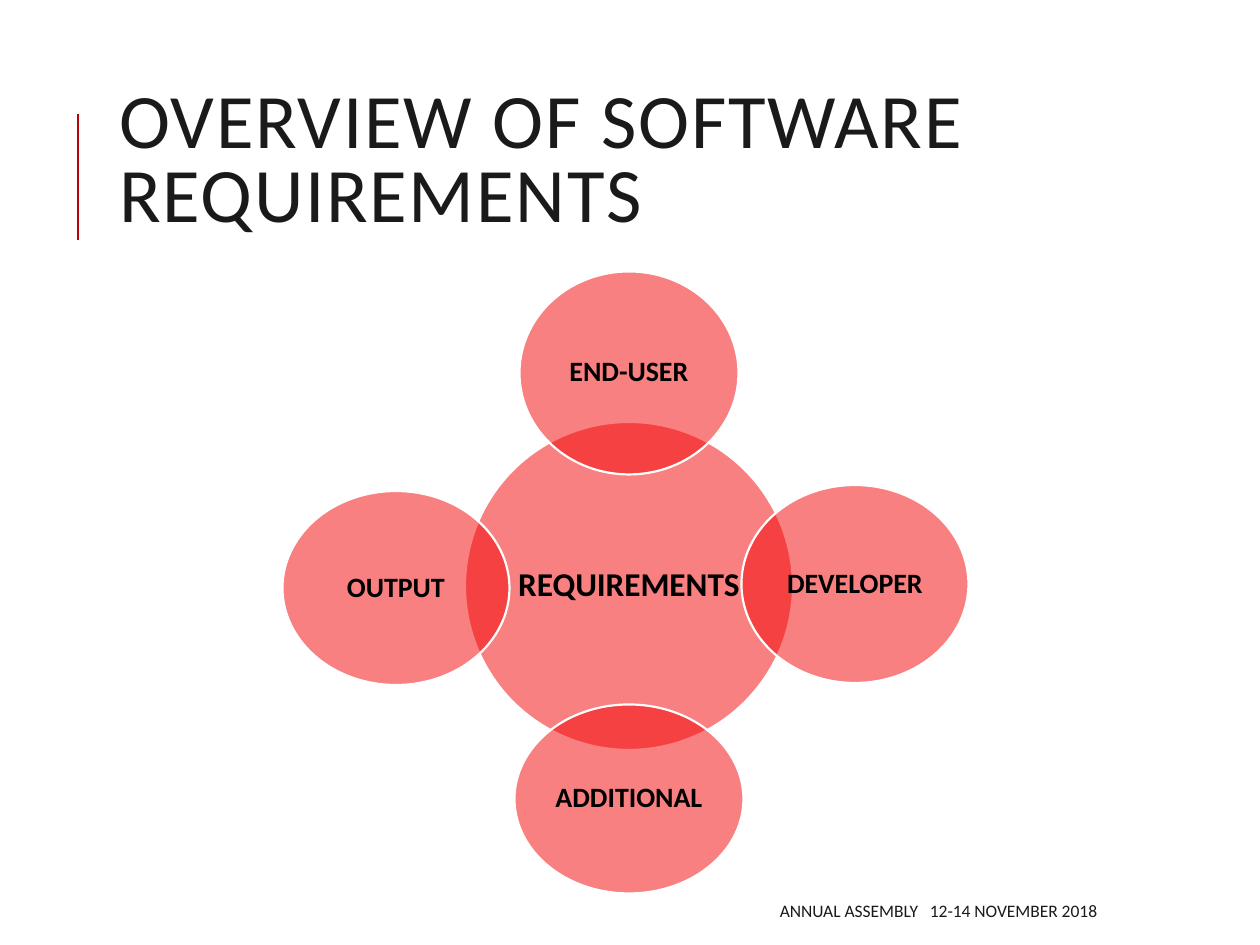
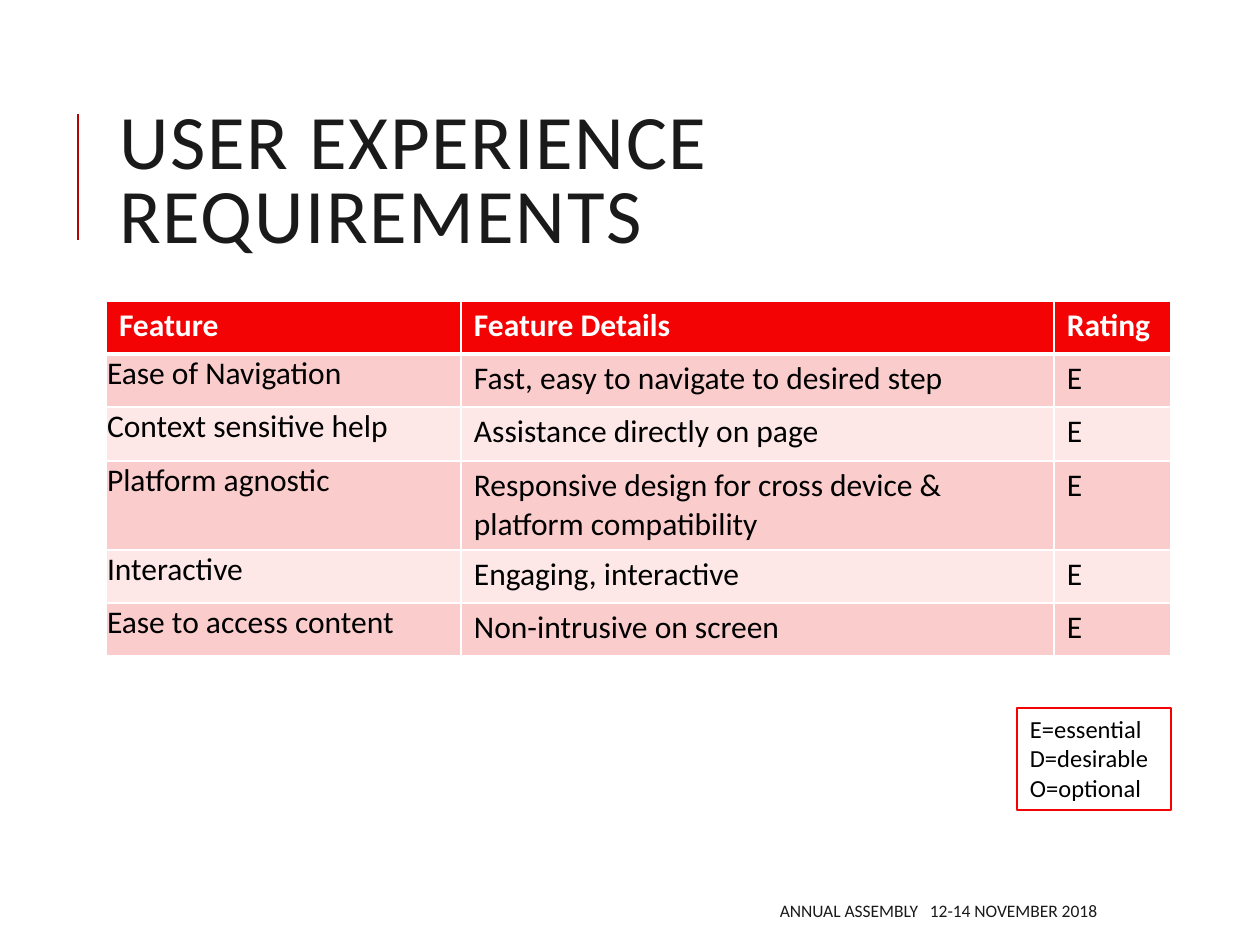
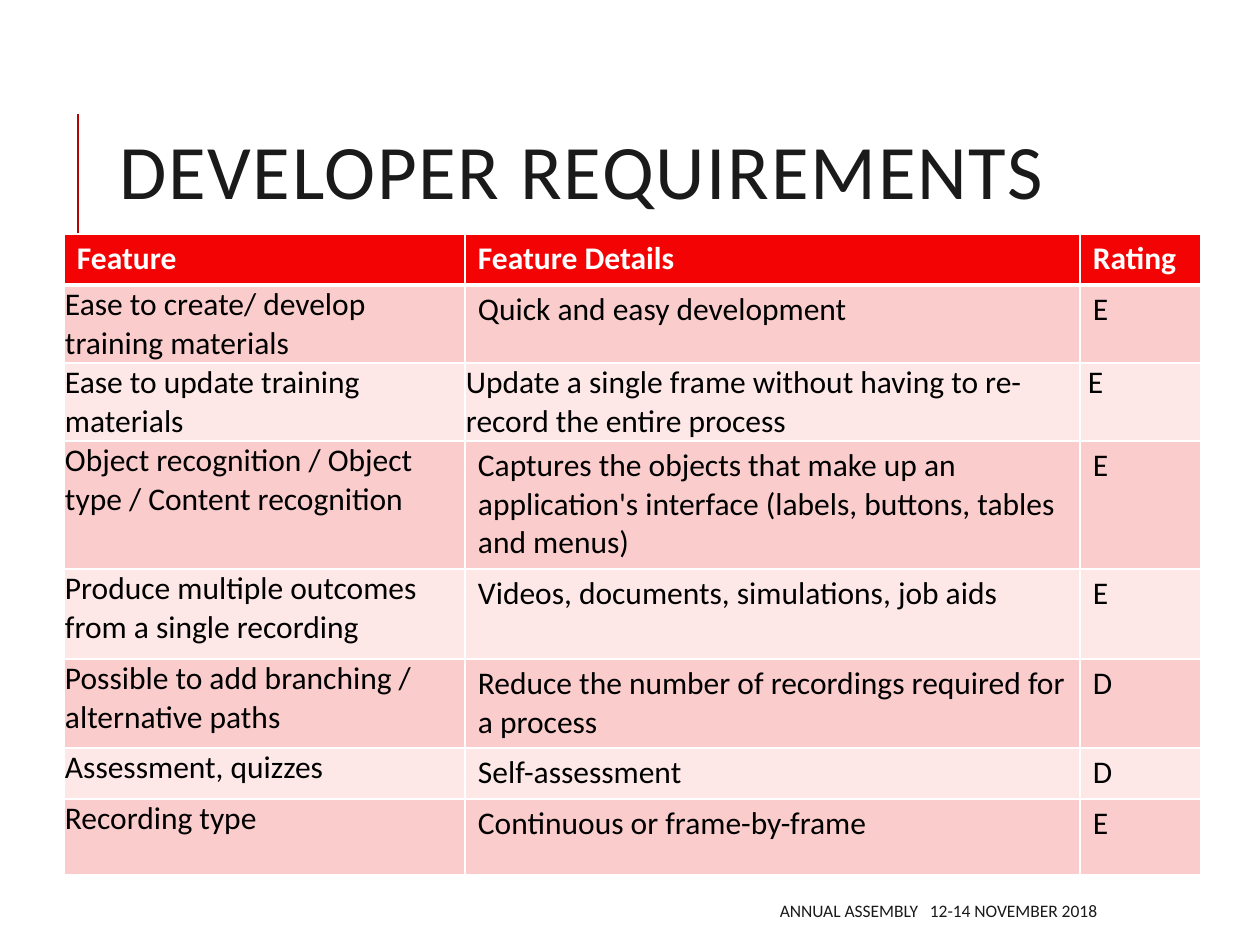
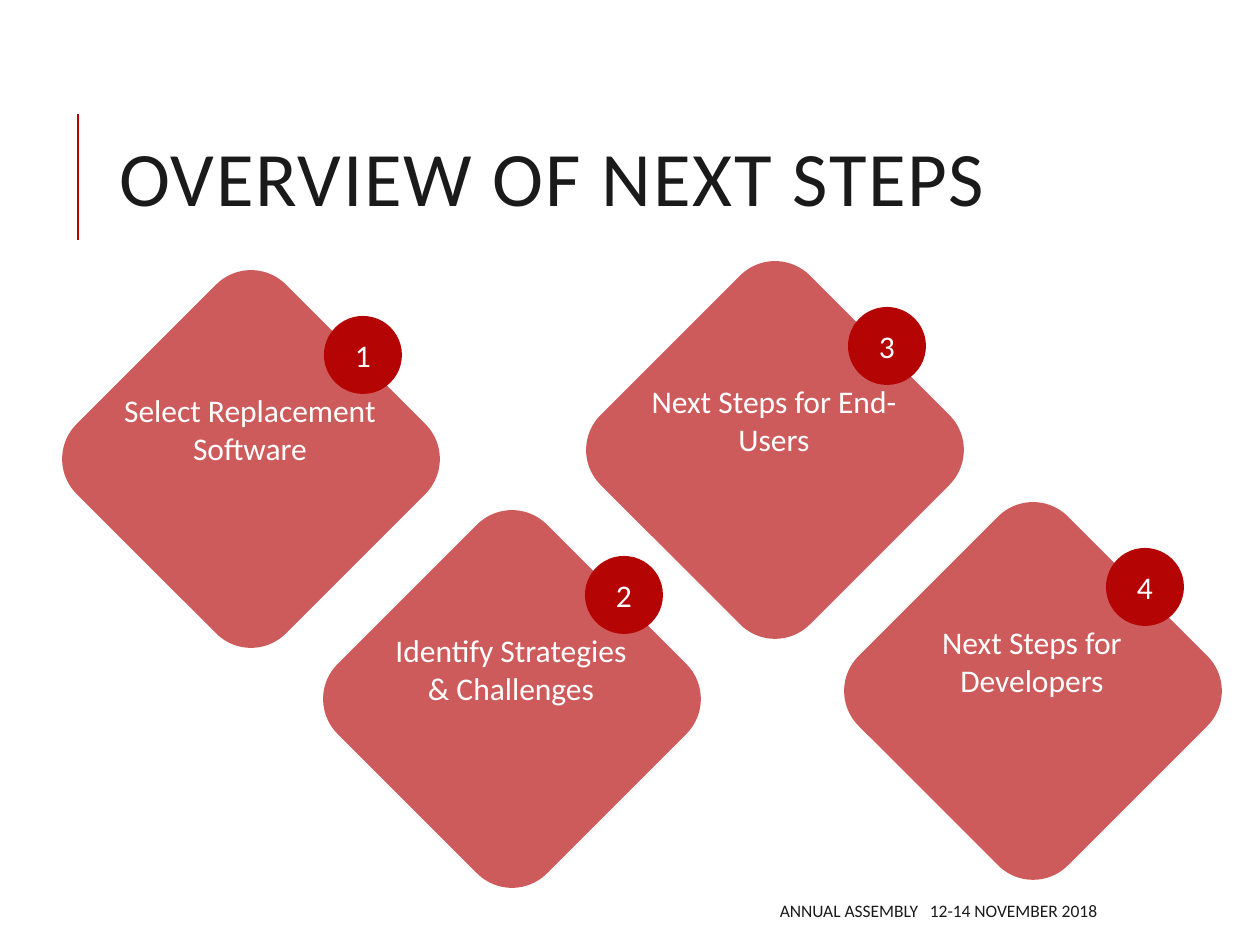
import dataclasses

import lxml.etree
import pptx
import pptx.dml.color
import pptx.enum.shapes
import pptx.enum.text
import pptx.oxml.ns
import pptx.util

SCALE = 914400 / 126
SHAPE = pptx.enum.shapes.MSO_SHAPE
ALIGN = pptx.enum.text.PP_ALIGN
ANCHOR = pptx.enum.text.MSO_ANCHOR


@dataclasses.dataclass(frozen=True)
class Theme:
    font: str = "Calibri"
    ink: str = "1A1A1A"
    black: str = "000000"
    white: str = "FFFFFF"
    red: str = "F30303"
    dark: str = "B40404"
    bands: tuple = ("FACCCC", "FDE7E7")
    title: int = 44
    hub: int = 19
    ring: int = 16
    body: int = 18
    key: int = 14
    foot: int = 10


THEME = Theme()
PAD = (13, 6, 13, 6)
TIGHT = (1, 1, 1, 0)
BAR = (78, 114, 126)
FOOT = (500, 892, 610, 38)


def emu(*sizes):
    return [round(size * SCALE) for size in sizes]


def color(code):
    return pptx.dml.color.RGBColor.from_string(code)


def child(parent, tag, **attrs):
    name = pptx.oxml.ns.qn(tag)
    return lxml.etree.SubElement(parent, name, attrs)


def write(frame, text, size=THEME.body, ink=THEME.black, bold=False,
          align=ALIGN.LEFT, anchor=ANCHOR.TOP, pad=PAD, lead=None, track=0, gap=0):
    """Fill a frame, one paragraph a line; a tab splits runs, set apart by gap points."""
    frame.word_wrap = True
    frame.vertical_anchor = anchor
    (frame.margin_left, frame.margin_top,
     frame.margin_right, frame.margin_bottom) = emu(*pad)
    for num, line in enumerate(text.split("\n")):
        para = frame.add_paragraph() if num else frame.paragraphs[0]
        para.alignment = align
        if lead:
            para.line_spacing = lead
        parts = [(part, track) for part in line.split("\t")]
        if len(parts) > 1:
            parts.insert(1, (" ", gap))
        for part, space in parts:
            run = para.add_run()
            run.text = part
            run.font.name = THEME.font
            run.font.size = pptx.util.Pt(size)
            run.font.bold = bold
            run.font.color.rgb = color(ink)
            if space:
                run.font._element.set("spc", str(round(space * 100)))


def label(slide, box, text, **style):
    frame = slide.shapes.add_textbox(*emu(*box)).text_frame
    write(frame, text, **style)


def draw(slide, kind, box, fill=None, alpha=100, line=None, width=1):
    shape = slide.shapes.add_shape(kind, *emu(*box))
    shape.shadow.inherit = False
    if fill:
        shape.fill.solid()
        shape.fill.fore_color.rgb = color(fill)
        if alpha < 100:
            tone = shape.fill._xPr.find(".//" + pptx.oxml.ns.qn("a:srgbClr"))
            child(tone, "a:alpha", val=str(alpha * 1000))
    else:
        shape.fill.background()
    if line:
        shape.line.color.rgb = color(line)
        shape.line.width = pptx.util.Pt(width)
    else:
        shape.line.fill.background()
    return shape


def start(deck, title, height):
    """Add a slide with its side bar, title and footer."""
    slide = deck.slides.add_slide(deck.slide_layouts[6])
    left, top, tall = BAR
    bar = slide.shapes.add_connector(
        pptx.enum.shapes.MSO_CONNECTOR.STRAIGHT, *emu(left, top + tall, left, top))
    bar.line.color.rgb = color(THEME.dark)
    bar.line.width = pptx.util.Pt(1.5)
    child(bar._element.spPr, "a:effectLst")
    label(slide, (106, 81, 1004, height), title, size=THEME.title, ink=THEME.ink,
          anchor=ANCHOR.MIDDLE, lead=0.8, track=1)
    label(slide, FOOT, "ANNUAL ASSEMBLY\t12-14 NOVEMBER 2018", size=THEME.foot,
          ink=THEME.ink, align=ALIGN.RIGHT, anchor=ANCHOR.MIDDLE, gap=4.5)
    return slide


def bubble(slide, box, text, size):
    disc = draw(slide, SHAPE.OVAL, box, THEME.red, 50, THEME.white, 1.25)
    write(disc.text_frame, text, size=size, bold=True, align=ALIGN.CENTER,
          anchor=ANCHOR.MIDDLE, pad=(3, 3, 3, 3), lead=0.9)


def venn(slide, box, ring):
    """Draw a hub in the box and place ring bubbles by offset from its centre."""
    left, top, wide, tall = box
    bubble(slide, box, "REQUIREMENTS", THEME.hub)
    for text, east, south, across, down in ring:
        spot = (left + wide / 2 + east - across / 2,
                top + tall / 2 + south - down / 2, across, down)
        bubble(slide, spot, text, THEME.ring)


def edge(cell, **widths):
    """Give a cell white borders; widths names a side and its points."""
    props = cell._tc.get_or_add_tcPr()
    for side in "LRTB":
        points = widths.get(side, 1)
        line = child(props, "a:ln" + side, w=str(pptx.util.Pt(points)))
        child(child(line, "a:solidFill"), "a:srgbClr", val=THEME.white)


def grid(slide, box, cols, heights, rows, inset=None):
    """Draw a feature table; inset maps (row, column) to cell margins."""
    inset = inset or {}
    rows = [("Feature", "Feature Details", "Rating")] + rows
    table = slide.shapes.add_table(len(rows), len(cols), *emu(*box)).table
    for col, wide in zip(table.columns, emu(*cols)):
        col.width = wide
    for row, tall in zip(table.rows, emu(*heights)):
        row.height = tall
    for r, row in enumerate(rows):
        head = r == 0
        for c, text in enumerate(row):
            cell = table.cell(r, c)
            edge(cell, B=3 if head else 1, T=3 if r == 1 else 1)
            cell.fill.solid()
            cell.fill.fore_color.rgb = color(THEME.red if head else THEME.bands[(r - 1) % 2])
            pad = PAD if head or c else TIGHT
            pad = inset.get((r, c), pad)
            write(cell.text_frame, text, bold=head,
                  ink=THEME.white if head else THEME.black)
            (cell.margin_left, cell.margin_top,
             cell.margin_right, cell.margin_bottom) = emu(*pad)


def legend(slide, box):
    frame = draw(slide, SHAPE.RECTANGLE, box, line=THEME.red, width=0.75).text_frame
    write(frame, "E=essential\nD=desirable\nO=optional", size=THEME.key)


def step(slide, left, top, num, text):
    """Draw a diamond with a numbered badge and a caption."""
    diamond = draw(slide, SHAPE.ROUNDED_RECTANGLE, (left, top, 296, 296), THEME.dark, 65)
    diamond.rotation = 45
    badge = draw(slide, SHAPE.OVAL, (left + 221, top + 5, 78, 78), THEME.dark)
    write(badge.text_frame, str(num), ink=THEME.white, align=ALIGN.CENTER,
          anchor=ANCHOR.MIDDLE)
    label(slide, (left + 5, top + 74, 284, 90), text, ink=THEME.white,
          align=ALIGN.CENTER)


RING = [
    ("END-USER", 0, -213, 219, 203),
    ("DEVELOPER", 226, -2, 227, 198),
    ("ADDITIONAL", 0, 213, 229, 189),
    ("OUTPUT", -233, 2, 227, 194),
]

USER = [
    ("Ease of Navigation", "Fast, easy to navigate to desired step", "E"),
    ("Context sensitive help", "Assistance directly on page", "E"),
    ("Platform agnostic",
     "Responsive design for cross device & platform compatibility", "E"),
    ("Interactive", "Engaging, interactive", "E"),
    ("Ease to access content", "Non-intrusive on screen", "E"),
]

MAKER = [
    ("Ease to create/ develop training materials", "Quick and easy development", "E"),
    ("Ease to update training materials",
     "Update a single frame without having to re-record the entire process", "E"),
    ("Object recognition / Object type / Content recognition",
     "Captures the objects that make up an application's interface "
     "(labels, buttons, tables and menus)", "E"),
    ("Produce multiple outcomes from a single recording",
     "Videos, documents, simulations, job aids", "E"),
    ("Possible to add branching / alternative paths",
     "Reduce the number of recordings required for a process", "D"),
    ("Assessment, quizzes", "Self-assessment", "D"),
    ("Recording type", "Continuous or frame-by-frame", "E"),
]

STEPS = [
    (103, 311, "Select Replacement Software"),
    (364, 551, "Identify Strategies & Challenges"),
    (627, 302, "Next Steps for End-Users"),
    (885, 543, "Next Steps for Developers"),
]


def main():
    deck = pptx.Presentation()
    deck.slide_width, deck.slide_height = emu(1260, 945)

    slide = start(deck, "OVERVIEW OF SOFTWARE REQUIREMENTS", 165)
    venn(slide, (465, 422, 328, 328), RING)

    slide = start(deck, "USER EXPERIENCE REQUIREMENTS", 207)
    grid(slide, (106, 301, 1065, 355), (355, 593, 117),
         (53, 53, 54, 89, 53, 53), USER)
    legend(slide, (1017, 708, 154, 102))

    slide = start(deck, "DEVELOPER REQUIREMENTS", 193)
    grid(slide, (64, 234, 1137, 641), (401, 615, 121),
         (51, 78, 78, 128, 90, 89, 51, 76), MAKER,
         inset={(2, 1): TIGHT, (2, 2): (8, 1, 1, 0)})

    slide = start(deck, "OVERVIEW OF NEXT STEPS", 207)
    for num, (left, top, text) in enumerate(STEPS, 1):
        step(slide, left, top, num, text)

    deck.save("out.pptx")


if __name__ == "__main__":
    main()
